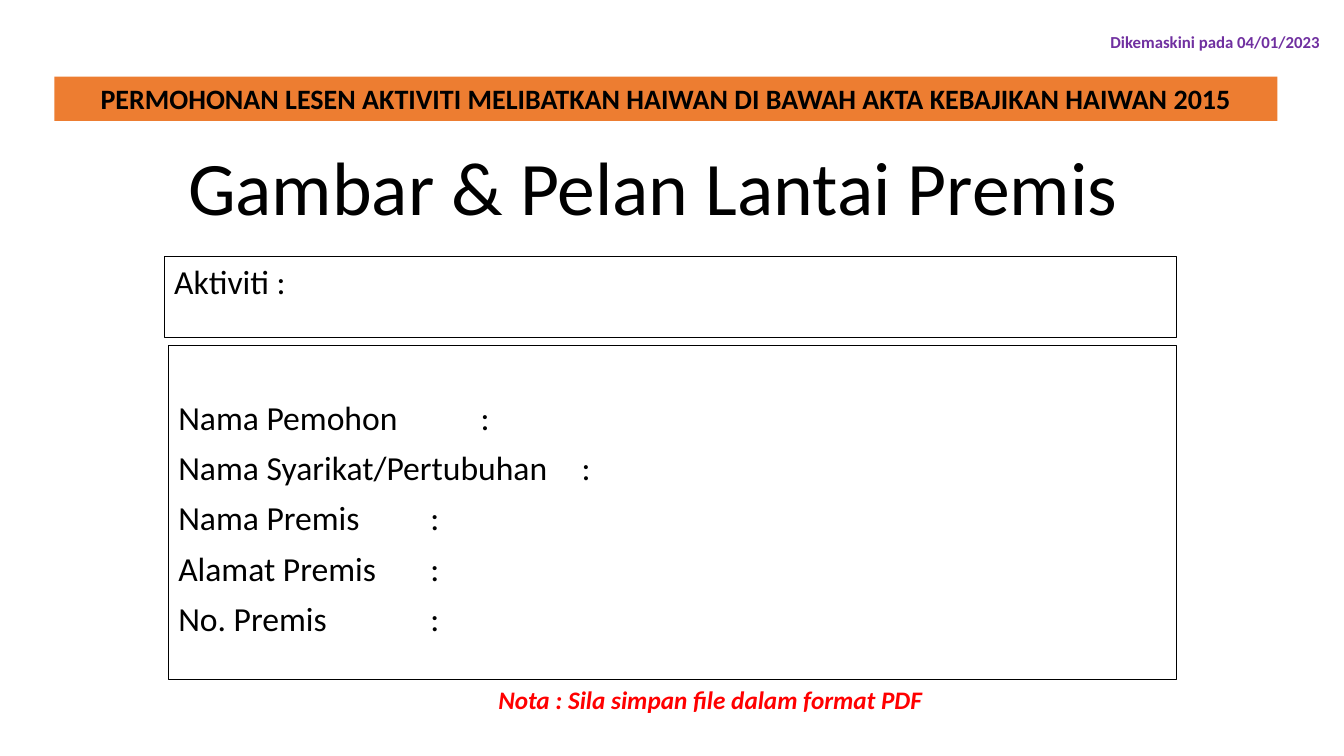
from dataclasses import dataclass, field

from pptx import Presentation
from pptx import util as u
from pptx.enum import shapes, text

HUES = {"black": "000000", "orange": "ED7D31", "red": "FF0000", "purple": "7030A0"}
LEFT, MID, RIGHT = text.PP_ALIGN.LEFT, text.PP_ALIGN.CENTER, text.PP_ALIGN.RIGHT


@dataclass
class Box:
    at: tuple[float, float, float, float]
    lines: list[str]
    size: int
    hue: str = "black"
    fill: str | None = None
    edge: str | None = None
    bold: bool = False
    slant: bool = False
    para: dict = field(default_factory=lambda: {"alignment": MID})
    frame: dict = field(default_factory=dict)


TITLE = Box((0.41, 1.39, 12.13, 0.96), ["Gambar & Pelan Lantai Premis"], 54,
            para={"alignment": MID, "line_spacing": 0.9},
            frame={"vertical_anchor": text.MSO_ANCHOR.BOTTOM})

BOXES = [
    Box((1.67, 3.43, 10, 3.31),
        ["Nama Pemohon \t\t:", "Nama Syarikat/Pertubuhan \t:", "Nama Premis \t\t:",
         "Alamat Premis\t\t:", "No. Premis \t\t:"], 24, edge="black",
        para={"alignment": LEFT, "line_spacing": 0.9, "space_before": u.Pt(10)},
        frame={"margin_top": u.Inches(0.55)}),
    Box((0.54, 0.76, 12.13, 0.44),
        ["PERMOHONAN LESEN AKTIVITI MELIBATKAN HAIWAN DI BAWAH AKTA KEBAJIKAN HAIWAN 2015"],
        20, fill="orange", bold=True),
    Box((1.87, 6.74, 10.35, 0.4), ["Nota : Sila simpan file dalam format PDF"], 18,
        hue="red", bold=True, slant=True),
    Box((1.63, 2.54, 10.04, 0.81), ["Aktiviti :"], 24, edge="black",
        para={"alignment": LEFT}),
    Box((10.14, 0.27, 3.05, 0.3), ["Dikemaskini pada 04/01/2023"], 12,
        hue="purple", bold=True, para={"alignment": RIGHT}),
]


def rgb(hue: str):
    return RGBColor.from_string(HUES[hue])


def assign(item, values: dict) -> None:
    for name, value in values.items():
        setattr(item, name, value)


def write(shape, box: Box) -> None:
    frame = shape.text_frame
    assign(frame, {"word_wrap": True, "auto_size": text.MSO_AUTO_SIZE.NONE,
                   "vertical_anchor": text.MSO_ANCHOR.TOP} | box.frame)
    frame.text = "\n".join(box.lines)
    for para in frame.paragraphs:
        assign(para, box.para)
        for run in para.runs:
            assign(run.font, {"name": "Calibri", "size": u.Pt(box.size),
                              "bold": box.bold, "italic": box.slant})
            run.font.color.rgb = rgb(box.hue)


def draw(slide, box: Box) -> None:
    at = map(u.Inches, box.at)
    if box.fill or box.edge:
        shape = slide.shapes.add_shape(shapes.MSO_SHAPE.RECTANGLE, *at)
        shape.shadow.inherit = False
        for paint, hue in ((shape.fill, box.fill), (shape.line.fill, box.edge)):
            if hue:
                paint.solid()
                paint.fore_color.rgb = rgb(hue)
            else:
                paint.background()
        if box.edge:
            shape.line.width = u.Pt(0.75)
    else:
        shape = slide.shapes.add_textbox(*at)
    write(shape, box)


def main() -> None:
    deck = Presentation()
    assign(deck, {"slide_width": u.Inches(13.33), "slide_height": u.Inches(7.5)})
    slide = deck.slides.add_slide(deck.slide_layouts[5])
    title = slide.shapes.title
    assign(title, dict(zip(("left", "top", "width", "height"), map(u.Inches, TITLE.at))))
    write(title, TITLE)
    for box in BOXES:
        draw(slide, box)
    deck.save("out.pptx")


from pptx.dml.color import RGBColor

if __name__ == "__main__":
    main()
